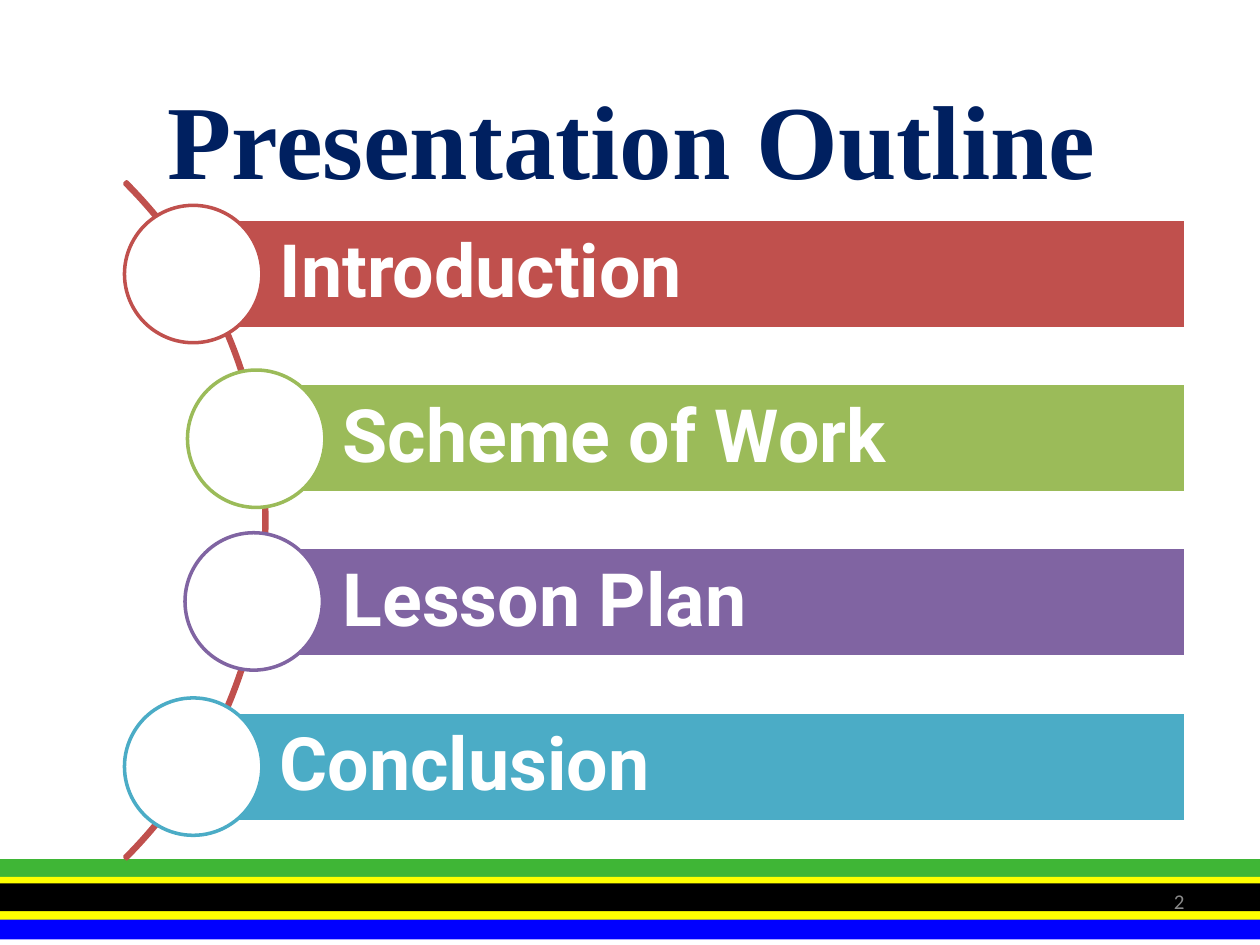
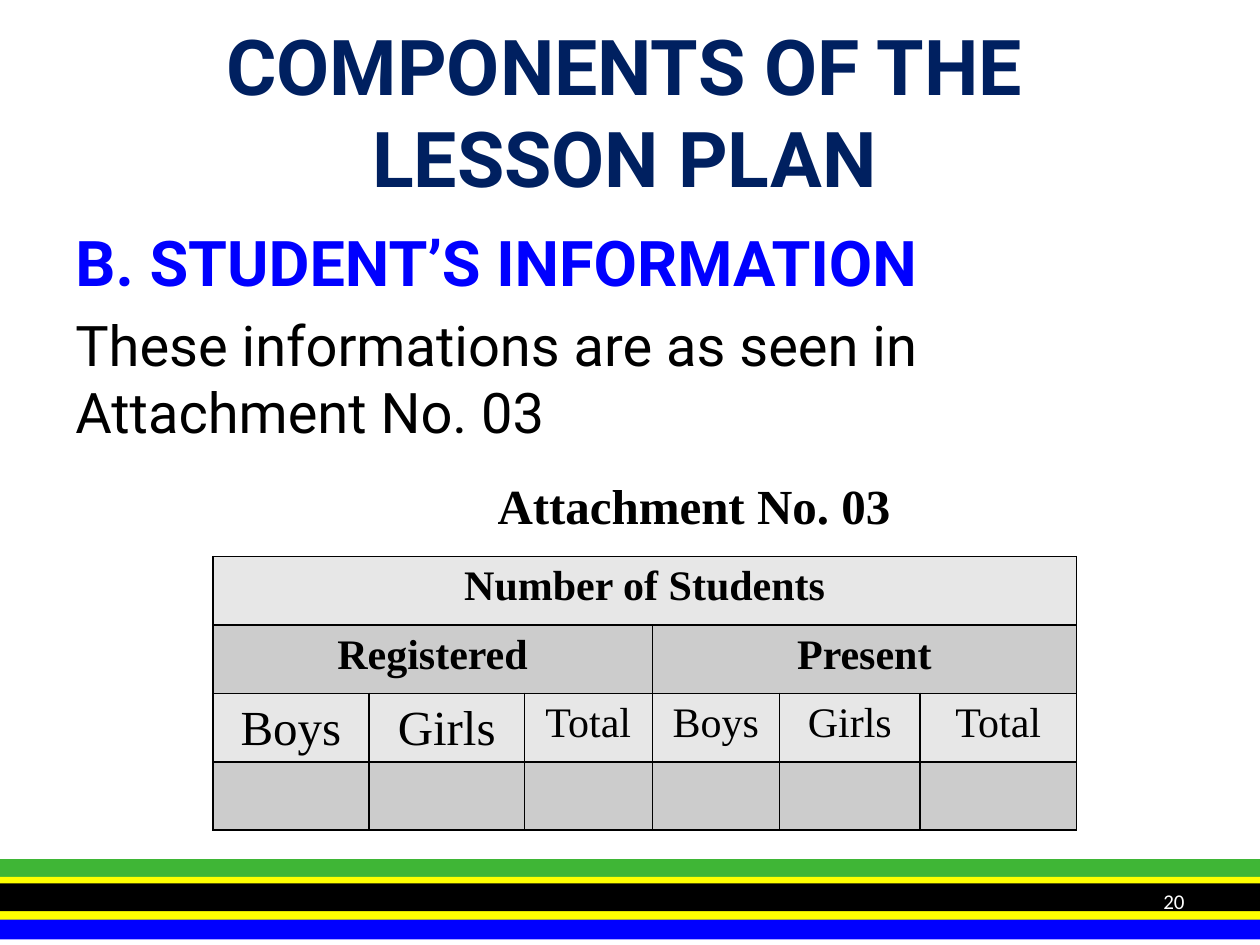
from lxml import etree
from pptx import Presentation
from pptx.dml.color import RGBColor
from pptx.enum.shapes import MSO_SHAPE
from pptx.enum.text import MSO_ANCHOR, PP_ALIGN
from pptx.oxml.ns import qn
from pptx.util import Cm, Pt

RECT, OVAL, ARC = MSO_SHAPE.RECTANGLE, MSO_SHAPE.OVAL, MSO_SHAPE.BLOCK_ARC
LEFT, MID, RIGHT = PP_ALIGN.LEFT, PP_ALIGN.CENTER, PP_ALIGN.RIGHT
TOP, CENTER = MSO_ANCHOR.TOP, MSO_ANCHOR.MIDDLE

SANS, SERIF, SMALL = "Roboto", "Times New Roman", "Calibri"
NAVY, BLUE, BLACK, WHITE = "002060", "0000FF", "000000", "FFFFFF"
RED, GREEN, PURPLE, TEAL = "C0504D", "9BBB59", "8064A2", "4BACC6"
YELLOW, LEAF, GREY = "FFFF00", "3FB636", "898989"
PALE, DARK = "E7E7E7", "CCCCCC"

WIDE, HIGH = 25.4, 19.05
# Flag bands from back to front: top, height, colour
BANDS = [(18.36, 0.58, BLUE), (17.32, 0.56, LEAF), (17.68, 0.28, YELLOW),
         (18.26, 0.28, YELLOW), (17.81, 0.56, BLACK)]


def paint(code):
    return RGBColor.from_string(code)


class Deck:
    def __init__(self):
        self.file = Presentation()
        self.file.slide_width, self.file.slide_height = Cm(WIDE), Cm(HIGH)
        self.slide = None

    def page(self, number, color):
        """Start a slide with its bands and page number."""
        self.slide = self.file.slides.add_slide(self.file.slide_layouts[6])
        for top, high, fill in BANDS:
            self.shape(RECT, (0, top, WIDE, high), fill)
        self.text((18.21, 17.65, 5.92, 1.02), number, 12, color, SMALL,
                  False, RIGHT, CENTER)

    def shape(self, kind, box, fill=None, line=None):
        item = self.slide.shapes.add_shape(kind, *map(Cm, box))
        item.shadow.inherit = False
        if fill:
            item.fill.solid()
            item.fill.fore_color.rgb = paint(fill)
        else:
            item.fill.background()
        if line:
            item.line.color.rgb = paint(line)
            item.line.width = Pt(2)
        else:
            item.line.fill.background()
        return item

    def style(self, para, text, size, color, font=SANS, bold=True, align=LEFT):
        para.text = text
        para.alignment = align
        para.font.size = Pt(size)
        para.font.name = font
        para.font.bold = bold
        para.font.color.rgb = paint(color)

    def text(self, box, text, size, color, font=SANS, bold=True, align=LEFT,
             anchor=TOP, wrap=True):
        frame = self.slide.shapes.add_textbox(*map(Cm, box)).text_frame
        frame.word_wrap = wrap
        frame.vertical_anchor = anchor
        self.style(frame.paragraphs[0], text, size, color, font, bold, align)
        return frame

    def title(self, box, text, size, font):
        self.text(box, text, size, NAVY, font, True, MID, CENTER)

    def bar(self, box, text, color):
        frame = self.shape(RECT, box, color, WHITE).text_frame
        frame.word_wrap = True
        frame.vertical_anchor = CENTER
        frame.margin_left = Cm(1.75)
        frame.margin_top = frame.margin_right = frame.margin_bottom = Cm(0.3)
        para = frame.paragraphs[0]
        self.style(para, text, 42, WHITE)
        para.line_spacing = 0.9

    def table(self, left, top, cols, rows, high):
        """Rows hold cells of (text, size, bold, span)."""
        grid = self.slide.shapes.add_table(
            len(rows), len(cols), Cm(left), Cm(top),
            Cm(sum(cols)), Cm(high * len(rows))).table
        for col, wide in zip(grid.columns, cols):
            col.width = Cm(wide)
        for r, row in enumerate(rows):
            grid.rows[r].height = Cm(high)
            for c in range(len(cols)):
                self.frame(grid.cell(r, c), DARK if r % 2 else PALE)
            c = 0
            for text, size, bold, span in row:
                cell = grid.cell(r, c)
                if span > 1:
                    cell.merge(grid.cell(r, c + span - 1))
                if text:
                    para = cell.text_frame.paragraphs[0]
                    self.style(para, text, size, BLACK, SERIF, bold, MID)
                    para.line_spacing = 1.15
                c += span

    def frame(self, cell, fill):
        """Fill a cell and give it thin black borders."""
        cell.fill.solid()
        cell.fill.fore_color.rgb = paint(fill)
        cell.margin_left = cell.margin_right = Cm(0.18)
        cell.margin_top = cell.margin_bottom = 0
        props = cell._tc.get_or_add_tcPr()
        for n, side in enumerate(("lnL", "lnR", "lnT", "lnB")):
            line = etree.Element(qn("a:" + side), w=str(Pt(1)))
            solid = etree.SubElement(line, qn("a:solidFill"))
            etree.SubElement(solid, qn("a:srgbClr"), val=BLACK)
            props.insert(n, line)


def outline(deck):
    deck.page("2", GREY)
    deck.title((1.3, 1.4, 22.86, 2.74), "Presentation Outline", 60, SERIF)

    # Curve behind the circles
    arc = deck.shape(ARC, (-13.92, 0.84, 19.3, 19.3), None, RED)
    for n, value in enumerate((189, 27, 0.003)):
        arc.adjustments[n] = value

    # Topics: text, colour, bar left, circle left and top
    topics = [("Introduction", RED, 3.89, 2.51, 4.14),
              ("Scheme of Work", GREEN, 5.16, 3.78, 7.46),
              ("Lesson Plan", PURPLE, 5.16, 3.73, 10.74),
              ("Conclusion", TEAL, 3.89, 2.51, 14.07)]
    edge, first, step, ball = 23.9, 4.42, 3.31, 2.77
    for n, (text, color, left, x, y) in enumerate(topics):
        deck.bar((left, first + n * step, edge - left, 2.21), text, color)
        deck.shape(OVAL, (x, y, ball, ball), WHITE, color)


def parts(deck):
    deck.page("20", WHITE)
    deck.title((3.3, 0.33, 18.59, 3.81), "COMPONENTS OF THE LESSON PLAN",
               44, SANS)

    # Body
    body = deck.text((1.27, 4.39, 22.86, 4.72), "B. STUDENT’S INFORMATION",
                     36, BLUE)
    para = body.add_paragraph()
    deck.style(para, "These informations are as seen in Attachment No. 03",
               32, BLACK, bold=False)
    para.space_before = Pt(6.4)

    # Table and its caption
    deck.text((9.78, 9.47, 8.53, 1.45), "Attachment No. 03", 28, BLACK,
              SERIF, wrap=False)
    heads = [("Boys", 28), ("Girls", 28), ("Total", 24),
             ("Boys", 24), ("Girls", 24), ("Total", 24)]
    rows = [[("Number of Students", 24, True, 6)],
            [("Registered", 24, True, 3), ("Present", 24, True, 3)],
            [(text, size, False, 1) for text, size in heads],
            [("", 24, False, 1)] * 6]
    deck.table(4.29, 11.22, [3.15, 3.13, 2.58, 2.56, 2.84, 3.15], rows, 1.38)


def main():
    deck = Deck()
    outline(deck)
    parts(deck)
    deck.file.save("out.pptx")


if __name__ == "__main__":
    main()
